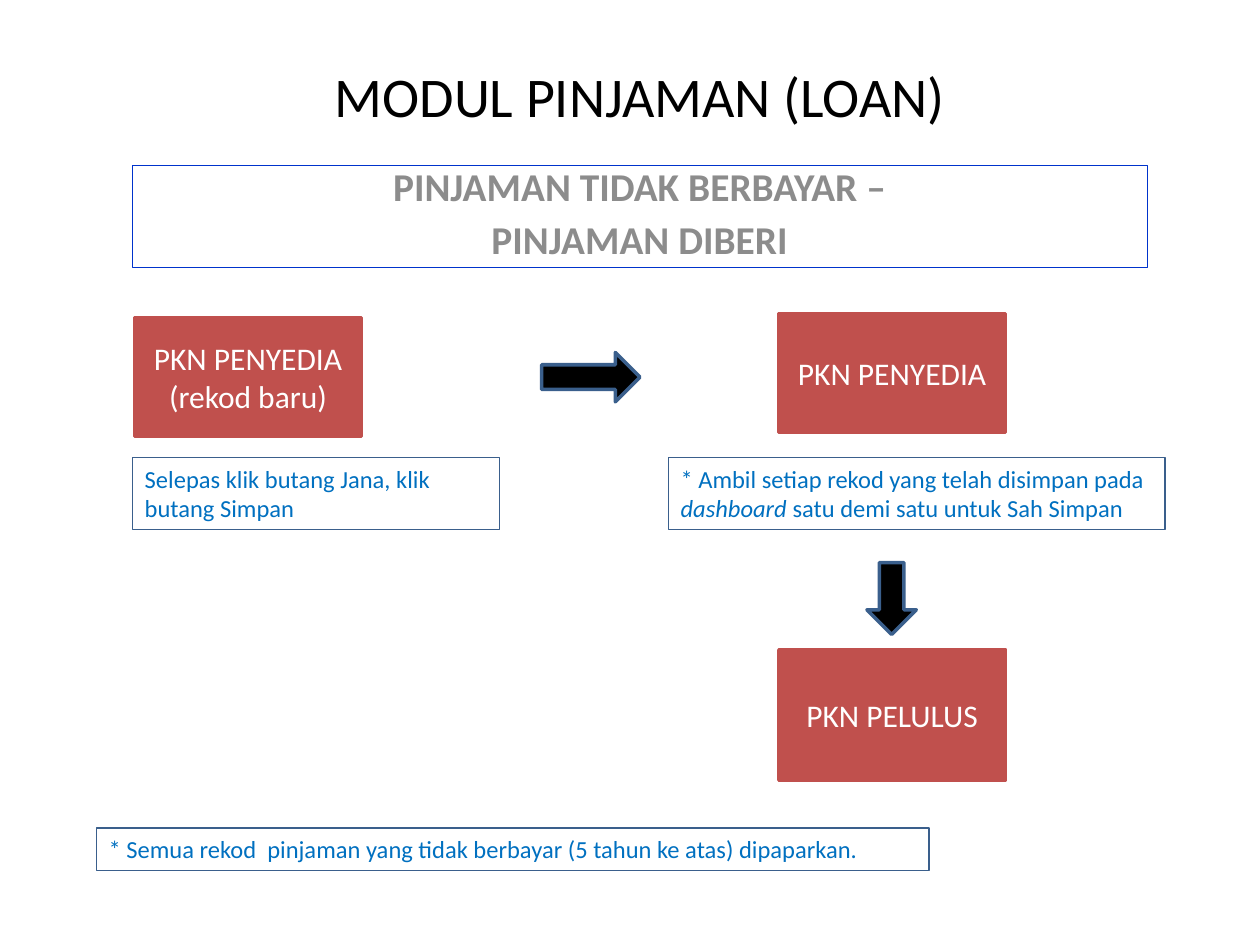
from pptx import Presentation
from pptx import util as u
from pptx.dml.color import RGBColor
from pptx.enum import shapes, text

COLOURS = {
    "title": "000000", "banner": "8C8C8C", "banner_line": "0033CC",
    "step": "C0504D", "step_text": "FFFFFF", "note": "0070C0",
    "edge": "3A5F8C", "arrow": "000000",
}
FONT = "Calibri"
CENTER = text.PP_ALIGN.CENTER
LEFT = text.PP_ALIGN.LEFT


def colour(name):
    return RGBColor.from_string(COLOURS[name])


class FlowSlide:
    """Holds the text styles and the slide being drawn."""

    styles = {
        "title": {"size": u.Pt(32)},
        "banner": {"size": u.Pt(22.5), "bold": True},
        "step_text": {"size": u.Pt(18)},
        "note": {"size": u.Pt(14)},
    }

    def __init__(self, deck):
        self.slide = deck.slides.add_slide(deck.slide_layouts[6])

    def fill_text(self, box, lines, style, align, anchor=text.MSO_ANCHOR.TOP):
        """Each line is a list of (words, italic) spans."""
        frame = box.text_frame
        frame.word_wrap = True
        frame.vertical_anchor = anchor
        for index, line in enumerate(lines):
            para = frame.add_paragraph() if index else frame.paragraphs[0]
            para.alignment = align
            for words, italic in line:
                span = para.add_run()
                span.text = words
                span.font.color.rgb = colour(style)
                values = {"name": FONT, "italic": italic, **self.styles[style]}
                for key, value in values.items():
                    setattr(span.font, key, value)
        return frame

    def shape(self, kind, place, line, width, fill=None):
        shape = self.slide.shapes.add_shape(kind, *map(u.Pt, place))
        shape.shadow.inherit = False
        if fill:
            shape.fill.solid()
            shape.fill.fore_color.rgb = colour(fill)
        else:
            shape.fill.background()
        shape.line.color.rgb = colour(line)
        shape.line.width = u.Pt(width)
        return shape

    def rectangle(self, *args):
        return self.shape(shapes.MSO_SHAPE.RECTANGLE, *args)

    def title(self, place, words):
        box = self.slide.shapes.add_textbox(*map(u.Pt, place))
        self.fill_text(box, [[(words, False)]], "title", CENTER)

    def banner(self, place, *lines):
        box = self.rectangle(place, "banner_line", 0.75)
        frame = self.fill_text(box, [[(words, False)] for words in lines],
                               "banner", CENTER)
        for para in frame.paragraphs:
            para.space_before = u.Pt(3.5)
        frame.paragraphs[0].line_spacing = 0.8

    def step(self, place, *lines):
        box = self.rectangle(place, "step", 2, "step")
        self.fill_text(box, [[(words, False)] for words in lines], "step_text",
                       CENTER, text.MSO_ANCHOR.MIDDLE)

    def note(self, place, *spans):
        box = self.rectangle(place, "edge", 0.75)
        frame = self.fill_text(box, [spans], "note", LEFT)
        frame.auto_size = text.MSO_AUTO_SIZE.SHAPE_TO_FIT_TEXT

    def arrow(self, place, rotation=0):
        arrow = self.shape(shapes.MSO_SHAPE.RIGHT_ARROW, place, "edge", 2, "arrow")
        arrow.rotation = rotation


def main():
    deck = Presentation()
    deck.slide_width, deck.slide_height = u.Pt(720), u.Pt(540)
    flow = FlowSlide(deck)

    # Heading
    flow.title((139, 31.7, 453.6, 46), "MODUL PINJAMAN (LOAN)")
    flow.banner((75.6, 94.5, 580, 58.5),
                "PINJAMAN TIDAK BERBAYAR –", "PINJAMAN DIBERI")

    # Steps, with the right column shared by two of them
    step_width, right_column = 129.6, 445
    flow.step((77, 181.4, step_width, 68), "PKN PENYEDIA", "(rekod baru)")
    flow.step((right_column, 179.2, step_width, 68), "PKN PENYEDIA")
    flow.step((right_column, 371.3, step_width, 74.5), "PKN PELULUS")

    # Arrows between the steps
    flow.arrow((309.5, 201.4, 56.2, 28.2))
    flow.arrow((489, 328, 41, 28.2), rotation=90)

    # Notes
    note_top, note_height = 261.4, 41.2
    flow.note((75.6, note_top, 209.8, note_height),
              ("Selepas klik butang Jana, klik butang Simpan", False))
    flow.note((381.8, note_top, 284, note_height),
              ("* Ambil setiap rekod yang telah disimpan pada ", False),
              ("dashboard ", True),
              ("satu demi satu untuk Sah Simpan", False))
    flow.note((55, 473.2, 476, 24.2),
              ("* Semua rekod  pinjaman yang tidak berbayar (5 tahun ke atas) dipaparkan.", False))

    deck.save("out.pptx")


if __name__ == "__main__":
    main()
